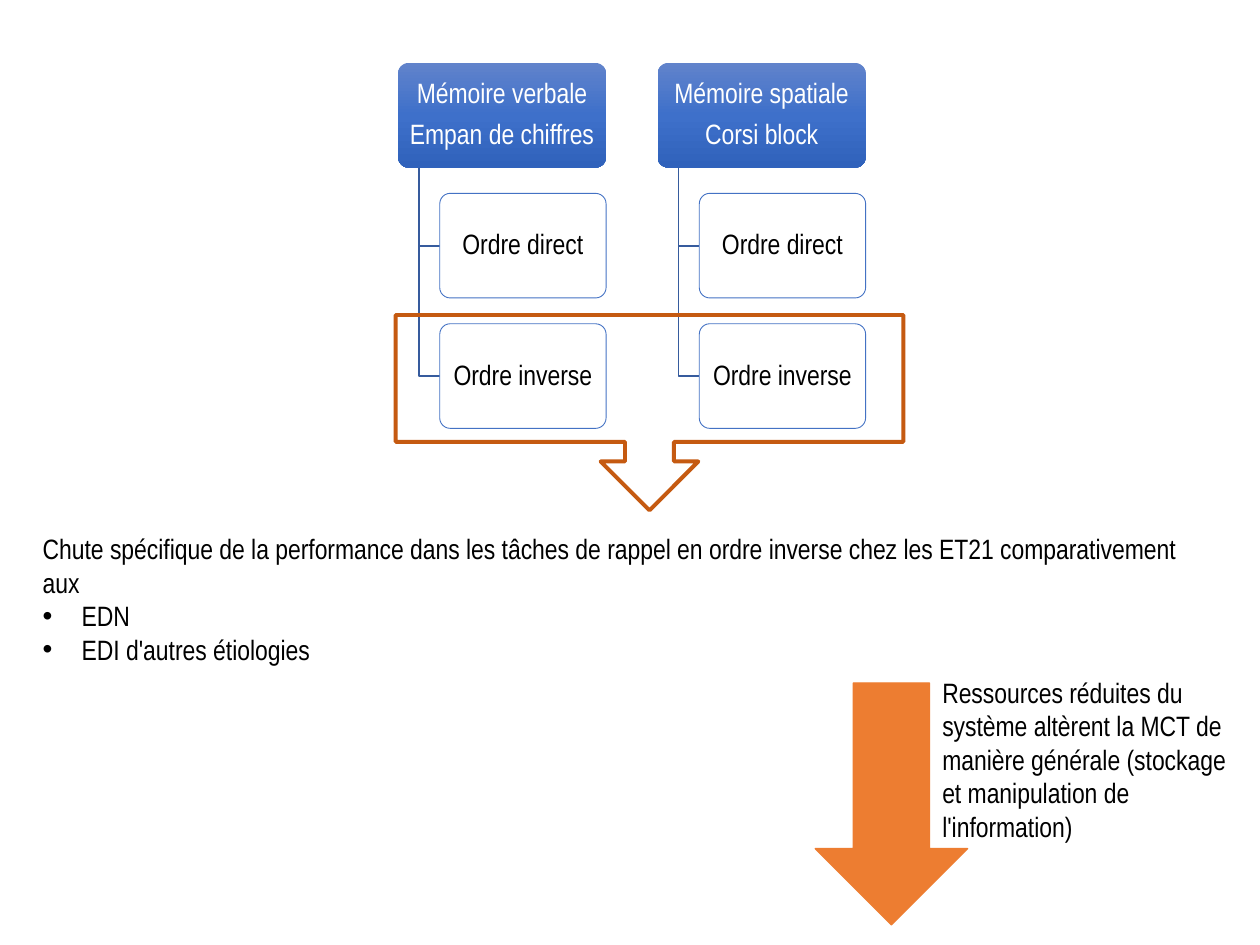
from copy import deepcopy
from dataclasses import dataclass

from lxml import etree
from pptx import Presentation
from pptx import util as u
from pptx.dml.color import RGBColor
from pptx.enum import shapes, text
from pptx.oxml.ns import qn


@dataclass(frozen=True)
class Theme:
    font: str = "Arial Narrow"
    size: float = 16
    dark: str = "000000"
    light: str = "FFFFFF"
    gradient: tuple[str, ...] = ("6183CB", "3E70CA", "3062BB")
    child_line: str = "4472C4"
    branch: str = "365B9D"
    arrow: str = "ED7D31"
    callout: str = "C55A11"


@dataclass(frozen=True)
class Box:
    left: float
    top: float
    width: float
    height: float

    def lengths(self):
        return [u.Inches(v) for v in (self.left, self.top, self.width, self.height)]


@dataclass(frozen=True)
class Task:
    left: float
    heading: tuple[str, ...]


THEME = Theme()
TOP = 0.5
HEIGHT = 0.83
PITCH = 1.035
PARENT_WIDTH = 1.65
INDENT = 0.33
ORDERS = ("Ordre direct", "Ordre inverse")
TASKS = (
    Task(3.16, ("Mémoire verbale", "Empan de chiffres")),
    Task(5.22, ("Mémoire spatiale", "Corsi block")),
)


def write(frame, lines, *, color=THEME.dark, align=None, spacing=None,
          after=None, bullets_from=None) -> None:
    frame.word_wrap = True
    for index, line in enumerate(lines):
        paragraph = frame.paragraphs[0] if index == 0 else frame.add_paragraph()
        paragraph.alignment = align
        paragraph.line_spacing = spacing
        paragraph.space_after = None if after is None else u.Pt(after)
        run = paragraph.add_run()
        run.text = line
        run.font.name = THEME.font
        run.font.size = u.Pt(THEME.size)
        run.font.color.rgb = RGBColor.from_string(color)
        if bullets_from is not None and index >= bullets_from:
            add_bullet(paragraph)


def add_bullet(paragraph) -> None:
    properties = paragraph._p.get_or_add_pPr()
    properties.set("marL", str(u.Inches(0.31)))
    properties.set("indent", str(u.Inches(-0.31)))
    etree.SubElement(properties, qn("a:buFont")).set("typeface", "Arial")
    etree.SubElement(properties, qn("a:buChar")).set("char", "•")


def add_text(slide, box: Box, lines, **format_options) -> None:
    frame = slide.shapes.add_textbox(*box.lengths()).text_frame
    write(frame, lines, **format_options)
    frame.auto_size = text.MSO_AUTO_SIZE.SHAPE_TO_FIT_TEXT


def add_shape(slide, kind, box: Box, *, fill=None, line=None, width=0.75):
    shape = slide.shapes.add_shape(kind, *box.lengths())
    shape.shadow.inherit = False
    paint(shape, fill, line, width)
    return shape


def paint(shape, fill, line, width: float) -> None:
    if fill:
        shape.fill.solid()
        shape.fill.fore_color.rgb = RGBColor.from_string(fill)
    else:
        shape.fill.background()
    if line:
        shape.line.color.rgb = RGBColor.from_string(line)
        shape.line.width = u.Pt(width)
    else:
        shape.line.fill.background()


def apply_gradient(shape, colors) -> None:
    shape.fill.gradient()
    shape.fill.gradient_angle = 270
    stops = shape._element.spPr.find(qn("a:gradFill")).find(qn("a:gsLst"))
    stops.insert(1, deepcopy(stops[0]))
    for index, (stop, color) in enumerate(zip(shape.fill.gradient_stops, colors)):
        stop.position = index / (len(colors) - 1)
        stop.color.rgb = RGBColor.from_string(color)


def add_node(slide, box: Box, lines, *, color=THEME.dark, fill=None, line=None):
    node = add_shape(slide, shapes.MSO_SHAPE.ROUNDED_RECTANGLE, box,
                     fill=fill, line=line, width=0.5)
    node.adjustments[0] = 0.1
    frame = node.text_frame
    frame.margin_left = frame.margin_right = u.Inches(0.06)
    frame.margin_top = frame.margin_bottom = u.Inches(0.05)
    frame.vertical_anchor = text.MSO_ANCHOR.MIDDLE
    write(frame, lines, color=color, align=text.PP_ALIGN.CENTER, spacing=0.9, after=6.4)
    return node


def add_branch(slide, parent: Box, child: Box) -> None:
    x = u.Inches(parent.left + parent.width / 10)
    y = u.Inches(child.top + child.height / 2)
    builder = slide.shapes.build_freeform(x, u.Inches(parent.top + parent.height))
    builder.add_line_segments([(x, y), (u.Inches(child.left), y)], close=False)
    branch = builder.convert_to_shape()
    branch.shadow.inherit = False
    paint(branch, None, THEME.branch, 1)


def add_task(slide, task: Task) -> None:
    parent = Box(task.left, TOP, PARENT_WIDTH, HEIGHT)
    heading = add_node(slide, parent, task.heading, color=THEME.light)
    apply_gradient(heading, THEME.gradient)
    for row, order in enumerate(ORDERS, start=1):
        child = Box(task.left + INDENT, TOP + row * PITCH, PARENT_WIDTH - INDENT, HEIGHT)
        add_branch(slide, parent, child)
        node = add_node(slide, child, [order], fill=THEME.light, line=THEME.child_line)
        color = node._element.spPr.find(qn("a:solidFill"))[0]
        etree.SubElement(color, qn("a:alpha")).set("val", "90000")


def main() -> None:
    presentation = Presentation()
    presentation.slide_width = u.Inches(10)
    presentation.slide_height = u.Inches(7.5)
    slide = presentation.slides.add_slide(presentation.slide_layouts[6])

    add_text(slide, Box(0.24, 4.17, 9.54, 1.18), [
        "Chute spécifique de la performance dans les tâches de rappel en ordre inverse "
        "chez les ET21 comparativement aux",
        "EDN",
        "EDI d'autres étiologies",
    ], bullets_from=1)
    add_shape(slide, shapes.MSO_SHAPE.DOWN_ARROW, Box(6.47, 5.42, 1.21, 1.92),
              fill=THEME.arrow, line=THEME.arrow)
    add_text(slide, Box(7.38, 5.31, 2.49, 1.45), [
        "Ressources réduites du système altèrent la MCT de manière générale "
        "(stockage et manipulation de l'information)",
    ])
    for task in TASKS:
        add_task(slide, task)
    add_shape(slide, shapes.MSO_SHAPE.DOWN_ARROW_CALLOUT, Box(3.14, 2.5, 4.03, 1.55),
              line=THEME.callout, width=2.25)

    presentation.save("out.pptx")


if __name__ == "__main__":
    main()
